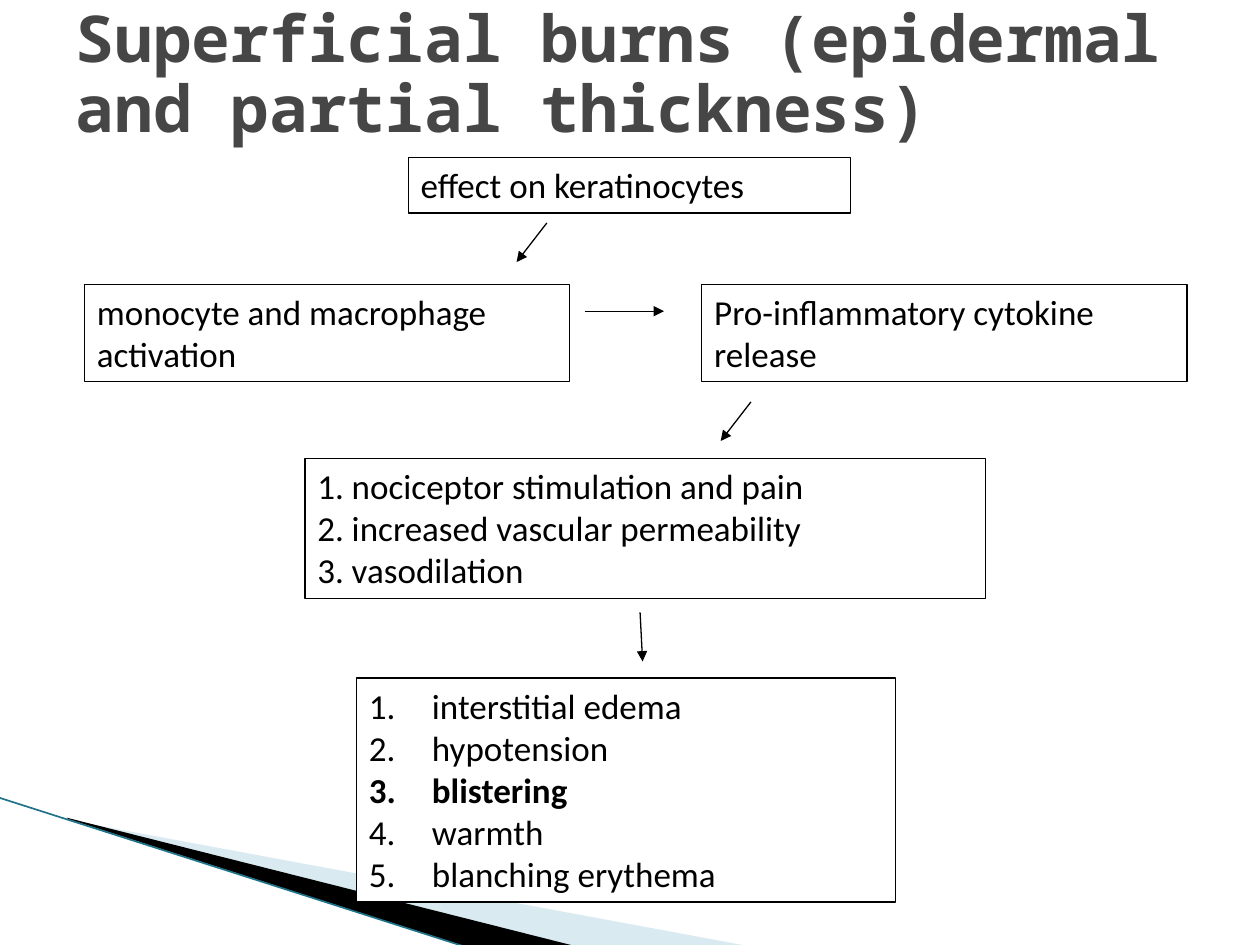
from dataclasses import dataclass

from lxml import etree
from pptx import Presentation
from pptx.dml.color import RGBColor
from pptx.enum import shapes, text
from pptx.oxml.ns import qn
from pptx.util import Inches, Pt

COLORS = {
    "ink": "000000",
    "paper": "FFFFFF",
    "title": "464646",
    "pale": "A0CBDC",
    "edge": "1F7388",
}
BODY_FONT = "Calibri"
TITLE_FONT = "Noto Sans Mono"


@dataclass
class Step:
    left: float
    top: float
    width: float
    height: float
    lines: list[str]
    numbered: bool = False
    bold_line: str = ""


@dataclass
class Line:
    start: tuple[float, float]
    end: tuple[float, float]
    color: str = "ink"
    weight: float = 0.75
    arrow: bool = True


@dataclass
class Wedge:
    points: list[tuple[float, float]]
    color: str
    opacity: int = 100


WEDGES = [
    Wedge([(0.55, 6.51), (5.95, 7.51), (4.56, 7.51), (0.55, 6.5)], "pale", 40),
    Wedge([(0.53, 6.49), (4.57, 7.51), (3.72, 7.52), (0.54, 6.5)], "ink"),
]
EDGE = Line((-0.01, 6.33), (3.71, 7.52), "edge", 0.95, arrow=False)

STEPS = [
    Step(3.24, 1.25, 3.51, 0.44, ["effect on keratinocytes"]),
    Step(0.67, 2.26, 3.85, 0.77, ["monocyte and macrophage activation"]),
    Step(5.57, 2.26, 3.85, 0.77, ["Pro-inflammatory cytokine release"]),
    Step(2.42, 3.64, 5.4, 1.11, [
        "1. nociceptor stimulation and pain",
        "2. increased vascular permeability",
        "3. vasodilation",
    ]),
    Step(2.83, 5.38, 4.28, 1.78, [
        "interstitial edema",
        "hypotension",
        "blistering",
        "warmth",
        "blanching erythema",
    ], numbered=True, bold_line="blistering"),
]
ARROWS = [
    Line((4.34, 1.77), (4.1, 2.08)),
    Line((5.96, 3.19), (5.72, 3.5)),
    Line((4.64, 2.47), (5.27, 2.47)),
    Line((5.08, 4.86), (5.1, 5.25)),
]


def rgb(name: str) -> RGBColor:
    return RGBColor.from_string(COLORS[name])


def draw_wedge(slide, wedge: Wedge) -> None:
    first, *rest = [(Inches(x), Inches(y)) for x, y in wedge.points]
    builder = slide.shapes.build_freeform(*first)
    builder.add_line_segments(rest, close=True)
    outline = builder.convert_to_shape()
    outline.shadow.inherit = False
    outline.fill.solid()
    outline.fill.fore_color.rgb = rgb(wedge.color)
    outline.line.fill.background()
    if wedge.opacity < 100:
        tint = outline._element.spPr.find(".//" + qn("a:srgbClr"))
        etree.SubElement(tint, qn("a:alpha"), val=str(wedge.opacity * 1000))


def draw_line(slide, line: Line) -> None:
    ends = [Inches(value) for value in (*line.start, *line.end)]
    connector = slide.shapes.add_connector(shapes.MSO_CONNECTOR.STRAIGHT, *ends)
    connector.line.color.rgb = rgb(line.color)
    connector.line.width = Pt(line.weight)
    if line.arrow:
        etree.SubElement(connector.line._get_or_add_ln(), qn("a:tailEnd"), type="triangle")
    etree.SubElement(connector._element.spPr, qn("a:effectLst"))


def number_paragraph(paragraph) -> None:
    properties = paragraph._p.get_or_add_pPr()
    properties.set("marL", str(Inches(0.5)))
    properties.set("indent", str(Inches(-0.5)))
    etree.SubElement(properties, qn("a:buFont"), typeface="+mj-lt")
    etree.SubElement(properties, qn("a:buAutoNum"), type="arabicPeriod")


def draw_step(slide, step: Step) -> None:
    box = slide.shapes.add_shape(
        shapes.MSO_SHAPE.RECTANGLE,
        Inches(step.left), Inches(step.top), Inches(step.width), Inches(step.height))
    box.shadow.inherit = False
    box.fill.solid()
    box.fill.fore_color.rgb = rgb("paper")
    box.line.color.rgb = rgb("ink")
    box.line.width = Pt(0.75)

    frame = box.text_frame
    frame.word_wrap = True
    frame.auto_size = text.MSO_AUTO_SIZE.SHAPE_TO_FIT_TEXT
    frame.vertical_anchor = text.MSO_ANCHOR.TOP
    frame.text = "\n".join(step.lines)
    for paragraph in frame.paragraphs:
        paragraph.alignment = text.PP_ALIGN.LEFT
        if step.numbered:
            number_paragraph(paragraph)
        paragraph.font.name = BODY_FONT
        paragraph.font.size = Pt(20)
        paragraph.font.color.rgb = rgb("ink")
        if paragraph.text == step.bold_line:
            paragraph.runs[0].font.bold = True


def set_title(slide, wording: str) -> None:
    title = slide.shapes.title
    title.left, title.top = Inches(0.5), Inches(0.38)
    title.width, title.height = Inches(9), Inches(0.45)
    frame = title.text_frame
    frame.text = wording
    frame.word_wrap = True
    frame.auto_size = text.MSO_AUTO_SIZE.NONE
    frame.vertical_anchor = text.MSO_ANCHOR.MIDDLE
    heading = frame.paragraphs[0]
    heading.alignment = text.PP_ALIGN.LEFT
    heading.line_spacing = 0.9
    heading.font.name = TITLE_FONT
    heading.font.size = Pt(36.9)
    heading.font.bold = True
    heading.font.color.rgb = rgb("title")


def main() -> None:
    deck = Presentation()
    deck.slide_width, deck.slide_height = Inches(10), Inches(7.5)
    slide = deck.slides.add_slide(deck.slide_layouts[5])

    # Corner decoration
    for wedge in WEDGES:
        draw_wedge(slide, wedge)
    draw_line(slide, EDGE)

    # Title and flow chart
    set_title(slide, "Superficial burns (epidermal and partial thickness)")
    for step in STEPS:
        draw_step(slide, step)
    for arrow in ARROWS:
        draw_line(slide, arrow)

    deck.save("out.pptx")


if __name__ == "__main__":
    main()
